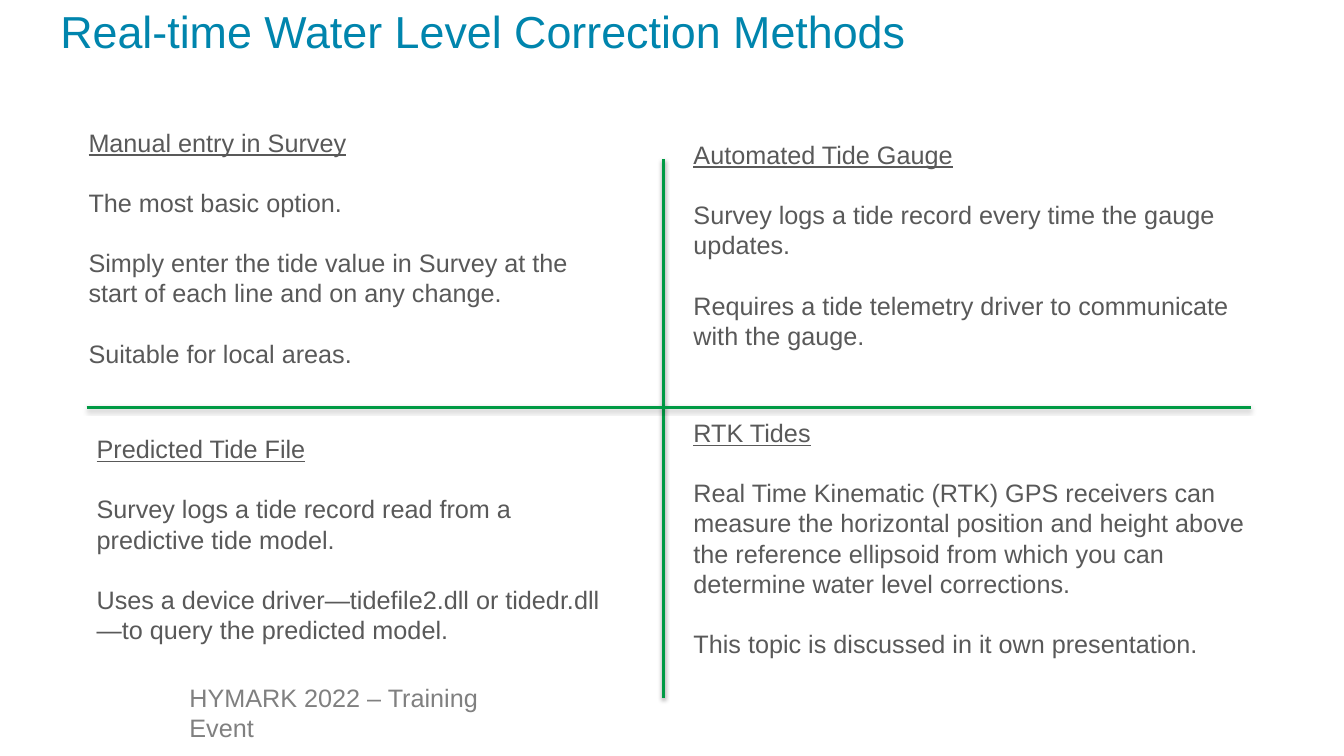
from dataclasses import dataclass

from lxml import etree
from pptx import Presentation
from pptx.dml.color import RGBColor
from pptx.enum import shapes, text
from pptx.oxml import ns
from pptx.util import Inches, Pt


@dataclass(frozen=True)
class Theme:
    font: str = "Arial"
    title_color: str = "0085AD"
    body_color: str = "595959"
    footer_color: str = "808080"
    rule_color: str = "009A44"
    title_size: int = 32
    body_size: int = 18
    title_spacing: int = 29
    paragraph_gap: float = 21.5
    rule_width: int = 2


class SlideBuilder:
    def __init__(self, page, theme):
        self.page = page
        self.theme = theme

    def text_box(self, area, paragraphs, size, color, wrap=True):
        box = self.page.shapes.add_textbox(*map(Inches, area))
        frame = box.text_frame
        frame.text = "\n".join(paragraphs)
        frame.word_wrap = wrap
        frame.vertical_anchor = text.MSO_ANCHOR.TOP
        for para in frame.paragraphs:
            for span in para.runs:
                span.font.name = self.theme.font
                span.font.size = Pt(size)
                span.font.color.rgb = RGBColor.from_string(color)
        return frame

    def title(self, area, wording):
        frame = self.text_box(area, [wording], self.theme.title_size, self.theme.title_color)
        frame.paragraphs[0].line_spacing = Pt(self.theme.title_spacing)

    def footer(self, area, wording):
        self.text_box(area, [wording], self.theme.body_size, self.theme.footer_color, wrap=False)

    def method(self, area, heading, details):
        frame = self.text_box(area, [heading, *details], self.theme.body_size, self.theme.body_color)
        first, *others = frame.paragraphs
        first.runs[0].font.underline = True
        for para in others:
            para.space_before = Pt(self.theme.paragraph_gap)

    def rule(self, start, end):
        line = self.page.shapes.add_connector(
            shapes.MSO_CONNECTOR.STRAIGHT, *map(Inches, start + end)
        )
        line.line.color.rgb = RGBColor.from_string(self.theme.rule_color)
        line.line.width = Pt(self.theme.rule_width)
        properties = line.element.find(ns.qn("p:spPr"))
        effects = etree.SubElement(properties, ns.qn("a:effectLst"))
        shadow = etree.SubElement(
            effects, ns.qn("a:outerShdw"),
            blurRad=str(Pt(3.1)), dist=str(Pt(1.6)), dir="5400000", rotWithShape="0",
        )
        color = etree.SubElement(shadow, ns.qn("a:srgbClr"), val="000000")
        etree.SubElement(color, ns.qn("a:alpha"), val="38000")


METHODS = [
    ((0.78, 1.21, 5.46, 2.4), "Manual entry in Survey", [
        "The most basic option.",
        "Simply enter the tide value in Survey at the start of each line and on any change.",
        "Suitable for local areas.",
    ]),
    ((6.78, 1.33, 5.57, 2.4), "Automated Tide Gauge", [
        "Survey logs a tide record every time the gauge updates.",
        "Requires a tide telemetry driver to communicate with the gauge.",
    ]),
    ((0.86, 4.25, 5.39, 2.4), "Predicted Tide File", [
        "Survey logs a tide record read from a predictive tide model.",
        "Uses a device driver—tidefile2.dll or tidedr.dll—to query the predicted model.",
    ]),
    ((6.78, 4.09, 5.87, 2.4), "RTK Tides", [
        "Real Time Kinematic (RTK) GPS receivers can measure the horizontal position and height "
        "above the reference ellipsoid from which you can determine water level corrections.",
        "This topic is discussed in it own presentation.",
    ]),
]


def main():
    deck = Presentation()
    deck.slide_width, deck.slide_height = Inches(13.33), Inches(7.5)
    builder = SlideBuilder(deck.slides.add_slide(deck.slide_layouts[6]), Theme())
    builder.footer((1.78, 6.72, 3.75, 0.4), "HYMARK 2022 – Training Event")
    builder.title((0.5, 0.12, 12.33, 1.08), "Real-time Water Level Correction Methods")
    builder.rule((6.58, 1.58), (6.58, 6.92))
    builder.rule((0.86, 4.04), (12.41, 4.04))
    for area, heading, details in METHODS:
        builder.method(area, heading, details)
    deck.save("out.pptx")


if __name__ == "__main__":
    main()
